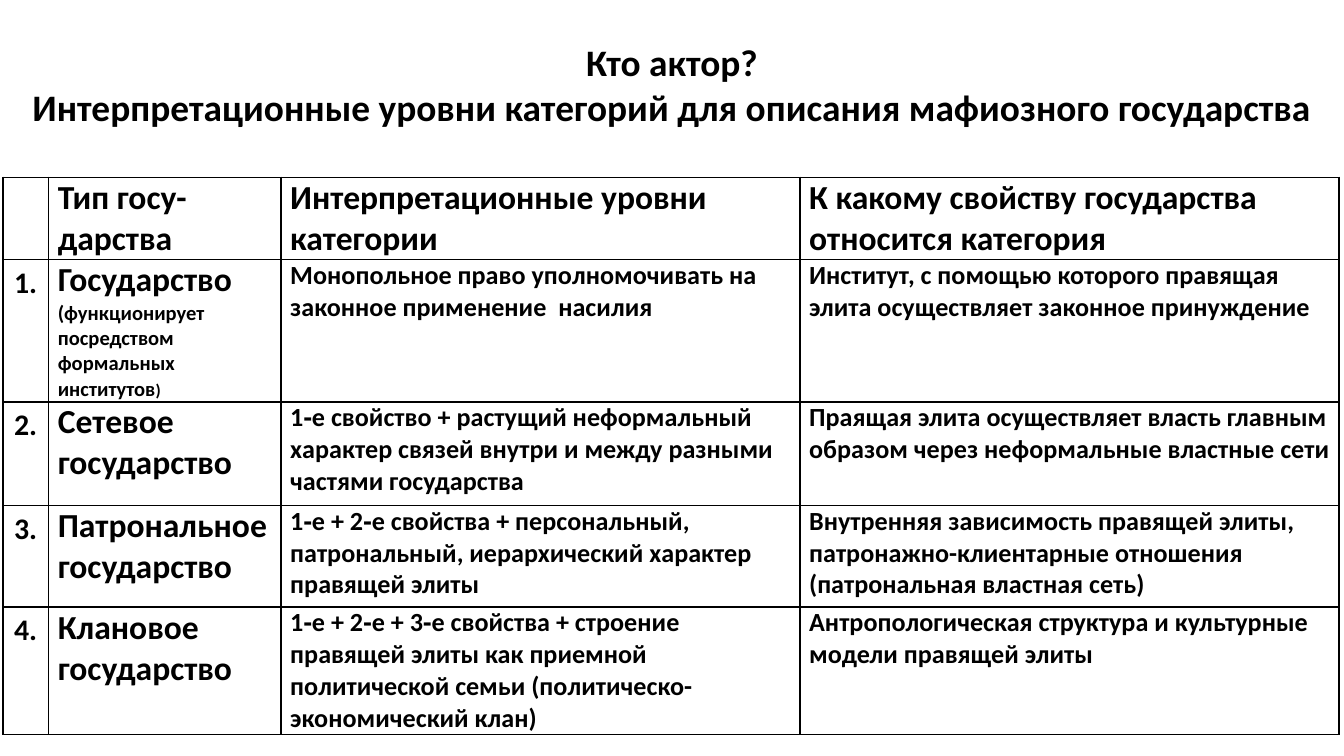
from lxml.etree import SubElement
from pptx import Presentation
from pptx.dml.color import RGBColor
from pptx.enum.text import MSO_ANCHOR, MSO_AUTO_SIZE, PP_ALIGN
from pptx.oxml.ns import qn
from pptx.util import Pt

BLACK = RGBColor(0, 0, 0)
FONT = "Calibri"
TITLE = ["Кто актор?",
         "Интерпретационные уровни категорий для описания мафиозного государства"]
COL_WIDTHS = [24.5, 124.5, 278, 289]
ROW_HEIGHTS = [42.5, 42.5, 55.5, 54.5, 64]
HEAD_SIZES = [18, 18, 18, 18]
BODY_SIZES = [16, 18, 14, 14]

# A cell is a string, or a list of (text, size) runs
ROWS = [
    ["", "Тип госу-дарства", "Интерпретационные уровни категории",
     "К какому свойству государства относится категория"],
    ["1.",
     [("Государство ", 18),
      ("(функционирует посредством формальных институтов", 11), (")", 9)],
     "Moнопольное право уполномочивать на законное применение  насилия",
     "Институт, с помощью которого правящая элита осуществляет законное принуждение"],
    ["2.", "Сeтевое государство",
     "1‐е свойство + растущий неформальный характер связей внутри и между "
     "разными частями государства",
     "Праящая элита осуществляет власть главным образом через неформальные "
     "властные сети"],
    ["3.", "Патрональное государство",
     "1‐е + 2‐е свойства + персональный, патрональный, иерархический характер "
     "правящей элиты",
     "Внутренняя зависимость правящей элиты, пaтронажно-клиентарные отношения "
     "(патрональная властная сеть)"],
    ["4.", "Клановое государство",
     "1‐е + 2‐е + 3‐е свойства + строение правящей элиты как приемной "
     "политической семьи (политическо-экономический клан)",
     "Антропологическая структура и культурные модели правящей элиты"],
]


def format_run(r, size):
    r.font.name = FONT
    r.font.size = Pt(size)
    r.font.bold = True
    r.font.color.rgb = BLACK


def set_borders(cell):
    tc_pr = cell._tc.get_or_add_tcPr()
    for side in ("a:lnL", "a:lnR", "a:lnT", "a:lnB"):
        ln = SubElement(tc_pr, qn(side), w=str(Pt(1)))
        fill = SubElement(ln, qn("a:solidFill"))
        SubElement(fill, qn("a:srgbClr"), val=str(BLACK))


def add_title(s, left, top, width, height):
    sp = s.shapes.title
    sp.left, sp.top, sp.width, sp.height = Pt(left), Pt(top), Pt(width), Pt(height)
    tf = sp.text_frame
    tf.text = "\n".join(TITLE)
    tf.word_wrap = True
    tf.auto_size = MSO_AUTO_SIZE.NONE
    tf.vertical_anchor = MSO_ANCHOR.TOP
    for p in tf.paragraphs:
        p.alignment = PP_ALIGN.CENTER
        p.space_before = Pt(0)
        for r in p.runs:
            format_run(r, 20)


def fill_cell(cell, content, size):
    cell.margin_left = cell.margin_right = Pt(5)
    cell.margin_top = cell.margin_bottom = 0
    set_borders(cell)
    cell.fill.background()
    p = cell.text_frame.paragraphs[0]
    runs = [(content, size)] if isinstance(content, str) else content
    for text, run_size in runs:
        if text:
            r = p.add_run()
            r.text = text
            format_run(r, run_size)


def add_levels_table(s, left, top, width, height):
    table = s.shapes.add_table(len(ROWS), len(COL_WIDTHS), Pt(left), Pt(top),
                               Pt(width), Pt(height)).table
    table.first_row = table.horz_banding = False
    for col, col_width in zip(table.columns, COL_WIDTHS):
        col.width = Pt(col_width)
    for i, (row, row_height) in enumerate(zip(table.rows, ROW_HEIGHTS)):
        row.height = Pt(row_height)
        sizes = BODY_SIZES if i else HEAD_SIZES
        for cell, content, size in zip(row.cells, ROWS[i], sizes):
            fill_cell(cell, content, size)
        # Row number
        if i:
            p = row.cells[0].text_frame.paragraphs[0]
            p.alignment = PP_ALIGN.CENTER
            p.line_spacing = 1.15


def main():
    prs = Presentation()
    prs.slide_width, prs.slide_height = Pt(720), Pt(405)
    s = prs.slides.add_slide(prs.slide_layouts[5])
    add_title(s, 0, 17.5, 720, 60.5)
    add_levels_table(s, 1.5, 95, sum(COL_WIDTHS), sum(ROW_HEIGHTS))
    prs.save("out.pptx")


if __name__ == "__main__":
    main()
